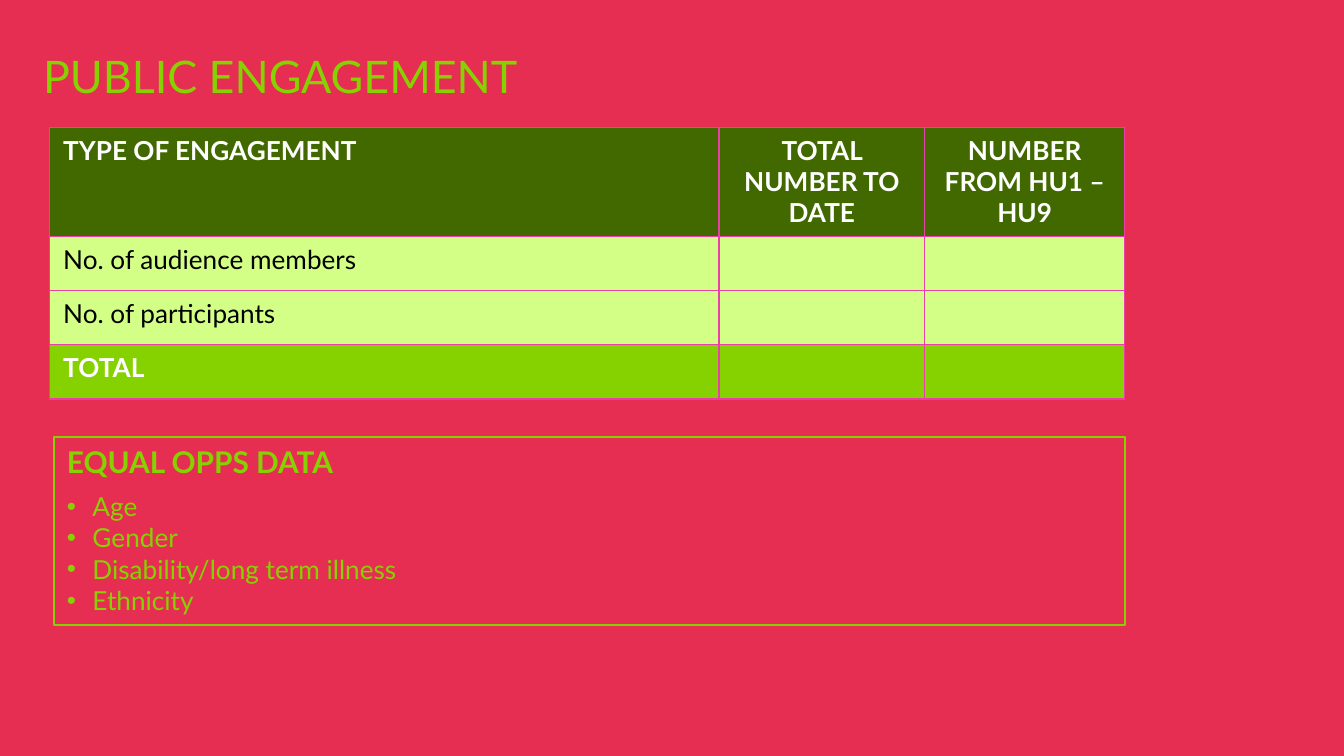
from dataclasses import dataclass

from lxml.etree import SubElement
from pptx import Presentation
from pptx.dml.color import RGBColor
from pptx.enum.shapes import MSO_SHAPE as Shape
from pptx.enum.text import MSO_ANCHOR as Anchor, MSO_AUTO_SIZE as AutoSize, PP_ALIGN as Align
from pptx.oxml import parse_xml
from pptx.oxml.ns import nsdecls, qn
from pptx.util import Inches, Pt

RED = RGBColor(0xE6, 0x2E, 0x52)
LIME = RGBColor(0x85, 0xD2, 0x00)
DARK_GREEN = RGBColor(0x42, 0x69, 0x00)
PALE_GREEN = RGBColor(0xD3, 0xFF, 0x87)
PINK = RGBColor(0xEB, 0x3E, 0xA8)
WHITE = RGBColor(0xFF, 0xFF, 0xFF)
BLACK = RGBColor(0x00, 0x00, 0x00)
FONT = "Lato"

SLIDE_WIDTH = 10
SLIDE_HEIGHT = SLIDE_WIDTH * 9 / 16
COLUMN_WIDTHS = (4.98, 1.53, 1.49)
HEADER_HEIGHT = 0.81
TABLE_HEIGHT = 2.02


@dataclass(frozen=True)
class TableRow:
    texts: tuple[str, ...]
    fill: RGBColor
    color: RGBColor
    bold: bool


ROWS = (
    TableRow(("TYPE OF ENGAGEMENT", "TOTAL NUMBER TO DATE", "NUMBER FROM HU1 – HU9"),
             DARK_GREEN, WHITE, True),
    TableRow(("No. of audience members", "", ""), PALE_GREEN, BLACK, False),
    TableRow(("No. of participants", "", ""), PALE_GREEN, BLACK, False),
    TableRow(("TOTAL", "", ""), LIME, WHITE, True),
)
EQUAL_OPPS = ("Age", "Gender", "Disability/long term illness", "Ethnicity")


def write(para, text: str, *, size: float = 14, color: RGBColor = LIME,
          bold: bool = False, align=Align.LEFT, after: float = 0) -> None:
    para.alignment = align
    para.space_before = Pt(0)
    para.space_after = Pt(after)
    span = para.add_run()
    span.text = text
    span.font.name = FONT
    span.font.size = Pt(size)
    span.font.bold = bold
    span.font.color.rgb = color


def add_bullet(para, indent: float = 0.19) -> None:
    properties = para._p.get_or_add_pPr()
    properties.set("marL", str(Inches(indent)))
    properties.set("indent", str(Inches(-indent)))
    SubElement(properties, qn("a:buFont"), typeface="Arial")
    SubElement(properties, qn("a:buChar"), char="•")


def add_borders(cell, color: RGBColor, width: float) -> None:
    properties = cell._tc.get_or_add_tcPr()
    for index, side in enumerate(("lnL", "lnR", "lnT", "lnB")):
        properties.insert(index, parse_xml(
            f'<a:{side} {nsdecls("a")} w="{Pt(width)}"><a:solidFill>'
            f'<a:srgbClr val="{color}"/></a:solidFill></a:{side}>'))


def add_title(page, text: str) -> None:
    title = page.shapes.title
    title.left, title.top = Inches(0.22), Inches(0.31)
    title.width, title.height = Inches(8.99), Inches(0.5)
    frame = title.text_frame
    frame.auto_size = AutoSize.SHAPE_TO_FIT_TEXT
    frame.vertical_anchor = Anchor.TOP
    write(frame.paragraphs[0], text, size=24)


def add_engagement_table(page) -> None:
    table = page.shapes.add_table(
        len(ROWS), len(COLUMN_WIDTHS), Inches(0.37), Inches(0.95),
        Inches(sum(COLUMN_WIDTHS)), Inches(TABLE_HEIGHT)).table
    for column, width in zip(table.columns, COLUMN_WIDTHS):
        column.width = Inches(width)
    body_height = (TABLE_HEIGHT - HEADER_HEIGHT) / (len(ROWS) - 1)
    for row_index, row in enumerate(ROWS):
        table.rows[row_index].height = Inches(body_height if row_index else HEADER_HEIGHT)
        for column_index, text in enumerate(row.texts):
            cell = table.cell(row_index, column_index)
            cell.fill.solid()
            cell.fill.fore_color.rgb = row.fill
            add_borders(cell, PINK, 0.75)
            if text:
                write(cell.text_frame.paragraphs[0], text, color=row.color, bold=row.bold,
                      align=Align.CENTER if column_index else Align.LEFT)


def add_equal_opps_box(page) -> None:
    box = page.shapes.add_shape(
        Shape.RECTANGLE, Inches(0.4), Inches(3.25), Inches(7.97), Inches(1.4))
    box.shadow.inherit = False
    box.fill.background()
    box.line.color.rgb = LIME
    box.line.width = Pt(1)
    frame = box.text_frame
    frame.word_wrap = True
    frame.auto_size = AutoSize.SHAPE_TO_FIT_TEXT
    frame.vertical_anchor = Anchor.TOP
    write(frame.paragraphs[0], "EQUAL OPPS DATA", size=16, bold=True, after=6)
    for item in EQUAL_OPPS:
        para = frame.add_paragraph()
        write(para, item)
        add_bullet(para)


def main() -> None:
    deck = Presentation()
    deck.slide_width, deck.slide_height = Inches(SLIDE_WIDTH), Inches(SLIDE_HEIGHT)
    page = deck.slides.add_slide(deck.slide_layouts.get_by_name("Title Only"))
    page.background.fill.solid()
    page.background.fill.fore_color.rgb = RED
    add_title(page, "PUBLIC ENGAGEMENT")
    add_engagement_table(page)
    add_equal_opps_box(page)
    deck.save("out.pptx")


if __name__ == "__main__":
    main()
